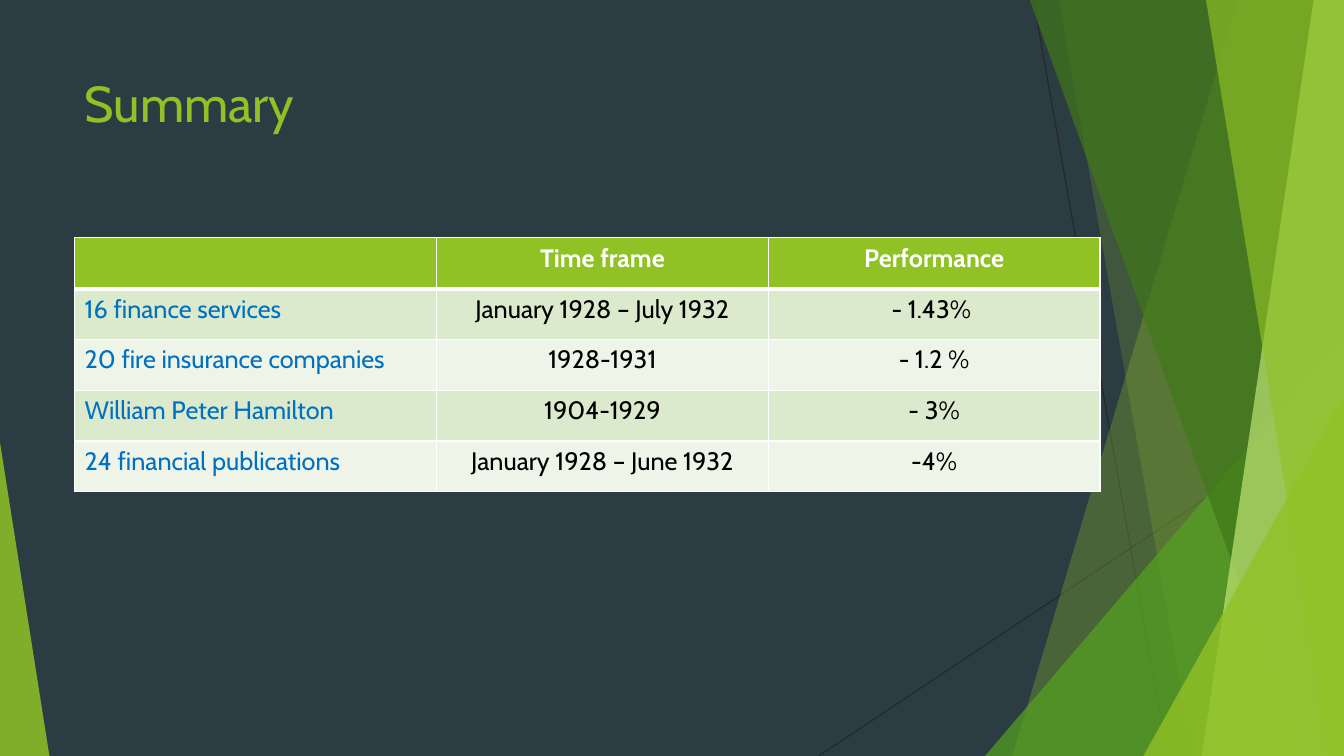
from lxml.etree import SubElement
from pptx import Presentation
from pptx.dml.color import RGBColor
from pptx.enum.shapes import MSO_CONNECTOR, MSO_SHAPE
from pptx.enum.text import PP_ALIGN
from pptx.oxml import parse_xml
from pptx.oxml.ns import nsdecls, qn
from pptx.util import Inches, Pt

FONT = "Cabin"
WIDTH, HEIGHT = 13.33, 7.5
COLORS = {
    "background": "2C3C43",
    "lime": "90C226",
    "green": "54A021",
    "forest": "3F7819",
    "pale": "C0E474",
    "hairline": "262626",
    "odd_row": "DBE9CD",
    "even_row": "EEF4E8",
    "label": "0070C0",
    "white": "FFFFFF",
    "black": "000000",
}
# Each band runs to the right edge: top-left x, bottom-left x, colour, opacity
BANDS = {
    "wide": (12.28, 10.04, "lime", 30),
    "faint": (10.5, 11.83, "lime", 20),
    "dark": (10.21, 12.91, "forest", 70),
    "light": (13.03, 11.92, "pale", 70),
    "bright": (11.96, 13.18, "lime", 65),
}
ROWS = [
    ("", "Time frame", "Performance"),
    ("16 finance services", "January 1928 – July 1932", "- 1.43% "),
    ("20 fire insurance companies", "1928-1931", "- 1.2 %"),
    ("William Peter Hamilton", "1904-1929", "- 3%"),
    ("24 financial publications", "January 1928 – June 1932", "-4%"),
]
COLUMN_WIDTHS = (3.59, 3.29, 3.29)


def rgb(name):
    return RGBColor.from_string(COLORS[name])


def paint(shape, color, opacity):
    """Give a shape a translucent fill, no outline and no shadow."""
    shape.shadow.inherit = False
    shape.line.fill.background()
    shape.fill.solid()
    shape.fill.fore_color.rgb = rgb(color)
    clr = shape.fill._xPr.find(qn("a:solidFill"))[0]
    SubElement(clr, qn("a:alpha"), val=str(opacity * 1000))


def add_hairline(s, x1, y1, x2, y2):
    line = s.shapes.add_connector(
        MSO_CONNECTOR.STRAIGHT, Inches(x1), Inches(y1), Inches(x2), Inches(y2))
    line.line.color.rgb = rgb("hairline")
    line.line.width = Pt(0.75)
    SubElement(line._element.spPr, qn("a:effectLst"))


def add_band(s, name):
    top_x, bottom_x, color, opacity = BANDS[name]
    top = -0.01
    outline = s.shapes.build_freeform(Inches(top_x), Inches(top))
    corners = [(WIDTH, top), (WIDTH, HEIGHT), (bottom_x, HEIGHT)]
    outline.add_line_segments([(Inches(x), Inches(y)) for x, y in corners])
    paint(outline.convert_to_shape(), color, opacity)


def add_corner(s, left, top, width, apex, color, opacity):
    """Add a triangle standing on the bottom edge, its tip at apex (0 left, 1 right)."""
    shape = s.shapes.add_shape(
        MSO_SHAPE.ISOSCELES_TRIANGLE,
        Inches(left), Inches(top), Inches(width), Inches(HEIGHT - top))
    shape.adjustments[0] = apex
    paint(shape, color, opacity)


def add_backdrop(s):
    add_hairline(s, 10.25, 0, 11.58, HEIGHT)
    add_hairline(s, WIDTH, 4.03, 8.12, HEIGHT)
    add_band(s, "wide")
    add_band(s, "faint")
    add_corner(s, 9.77, 3.33, 3.56, 1, "green", 72)
    for name in ("dark", "light", "bright"):
        add_band(s, name)
    add_corner(s, 11.34, 3.93, 1.99, 1, "lime", 80)
    add_corner(s, 0, 4.39, 0.49, 0, "lime", 85)


def style_text(p, size, color, bold=False):
    p.font.name = FONT
    p.font.size = Pt(size)
    p.font.bold = bold
    p.font.color.rgb = rgb(color)


def add_title(s, text):
    tf = s.shapes.add_textbox(
        Inches(0.74), Inches(0.67), Inches(9.4), Inches(1.44)).text_frame
    tf.word_wrap = True
    p = tf.paragraphs[0]
    p.text = text
    style_text(p, 36, "lime")


def set_borders(cell, top, bottom):
    """Draw white borders; top and bottom are widths in points."""
    tc_pr = cell._tc.get_or_add_tcPr()
    widths = {"lnL": 1, "lnR": 1, "lnT": top, "lnB": bottom}
    for i, (side, width) in enumerate(widths.items()):
        tc_pr.insert(i, parse_xml(
            f'<a:{side} {nsdecls("a")} w="{Pt(width)}"><a:solidFill>'
            f'<a:srgbClr val="{COLORS["white"]}"/></a:solidFill></a:{side}>'))


def fill_cell(cell, text, row, col):
    header = row == 0
    if header:
        fill, color = "lime", "white"
    else:
        fill = "odd_row" if row % 2 else "even_row"
        color = "black" if col else "label"
    cell.fill.solid()
    cell.fill.fore_color.rgb = rgb(fill)
    set_borders(cell, top=3 if row == 1 else 1, bottom=3 if header else 1)
    p = cell.text_frame.paragraphs[0]
    p.text = text
    p.alignment = PP_ALIGN.CENTER if col else PP_ALIGN.LEFT
    style_text(p, 18, color, header)


def add_summary_table(s):
    table = s.shapes.add_table(
        len(ROWS), len(COLUMN_WIDTHS),
        Inches(0.74), Inches(2.36), Inches(sum(COLUMN_WIDTHS)), Inches(2.52)).table
    table.horz_banding = False
    for column, width in zip(table.columns, COLUMN_WIDTHS):
        column.width = Inches(width)
    for row, texts in enumerate(ROWS):
        for col, text in enumerate(texts):
            fill_cell(table.cell(row, col), text, row, col)


def main():
    prs = Presentation()
    prs.slide_width, prs.slide_height = Inches(WIDTH), Inches(HEIGHT)
    s = prs.slides.add_slide(prs.slide_layouts[6])
    s.background.fill.solid()
    s.background.fill.fore_color.rgb = rgb("background")
    add_backdrop(s)
    add_title(s, "Summary")
    add_summary_table(s)
    prs.save("out.pptx")


if __name__ == "__main__":
    main()
